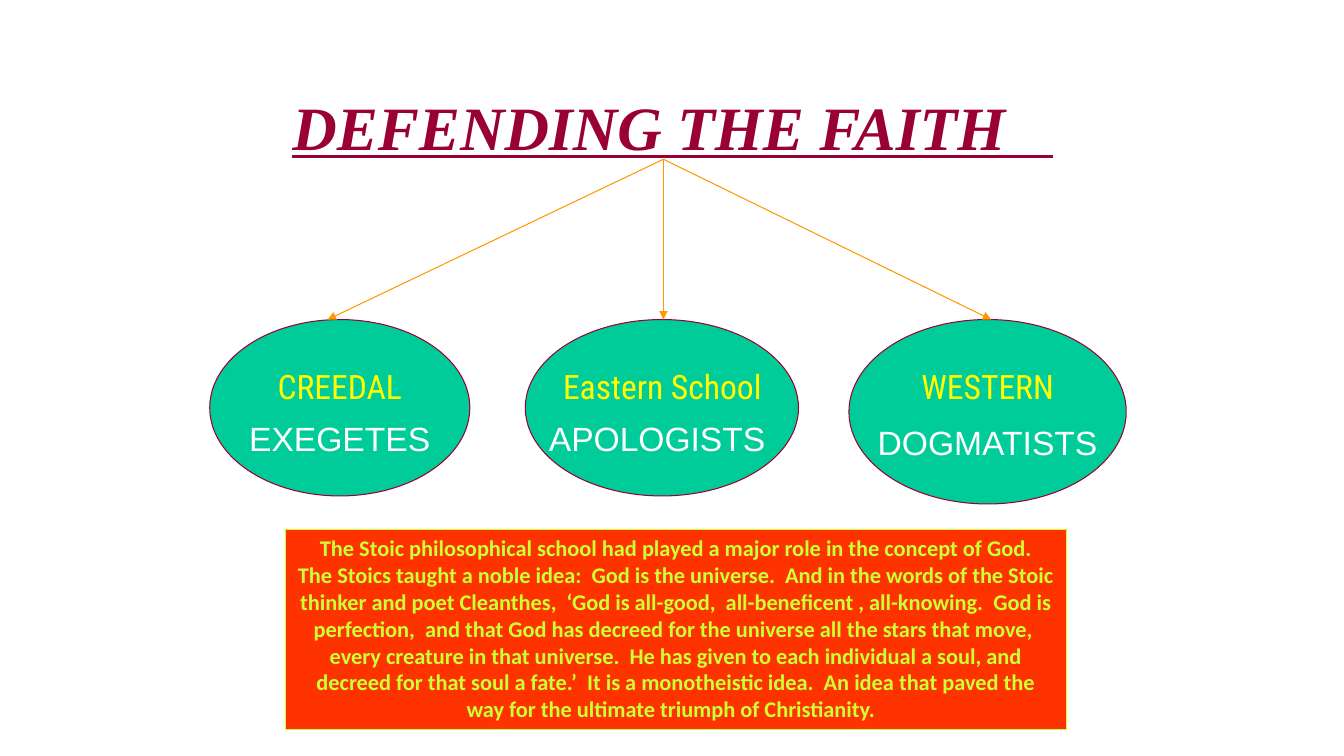
"""Build the "Defending the faith" slide: a title branching to three schools."""
from dataclasses import dataclass

from lxml import etree
from pptx import Presentation
from pptx.dml.color import RGBColor
from pptx.enum.shapes import MSO_CONNECTOR, MSO_SHAPE
from pptx.enum.text import MSO_ANCHOR, PP_ALIGN
from pptx.oxml.ns import qn
from pptx.util import Inches, Pt

OVAL = MSO_SHAPE.OVAL
RECTANGLE = MSO_SHAPE.RECTANGLE
STRAIGHT = MSO_CONNECTOR.STRAIGHT
CENTER = PP_ALIGN.CENTER
TOP = MSO_ANCHOR.TOP
MIDDLE = MSO_ANCHOR.MIDDLE

MAROON = "990033"
GREEN = "00CC99"
YELLOW = "FFFF00"
WHITE = "FFFFFF"
ORANGE = "FF9900"
RED = "FF3300"
LIME = "CCFF33"

BRANCH_X, BRANCH_Y = 6.58, 1.58
SCHOOL_TOP = 3.17
LABEL_TOP = 3.58

STOIC_TEXT = (
    " The Stoic philosophical school had played a major role in the concept of God.  "
    "The Stoics taught a noble idea:  God is the universe.  And in the words of the Stoic "
    "thinker and poet Cleanthes,  ‘God is all-good,  all-beneficent , all-knowing.  God is "
    "perfection,  and that God has decreed for the universe all the stars that move,  "
    "every creature in that universe.  He has given to each individual a soul, and "
    "decreed for that soul a fate.’  It is a monotheistic idea.  An idea that paved the "
    "way for the ultimate triumph of Christianity.  "
)


@dataclass(frozen=True)
class Style:
    """Type settings of a text."""
    font: str
    size: int
    color: str
    bold: bool = False
    italic: bool = False
    underline: bool = False


@dataclass(frozen=True)
class School:
    """One oval with its label and the end of its arrow."""
    label: str
    name: str
    left: float
    width: float
    height: float
    label_left: float
    label_width: float
    arrow_x: float


TITLE = Style("Times New Roman", 44, MAROON, bold=True, italic=True, underline=True)
LABEL = Style("Roboto Condensed", 24, YELLOW)
NAME = Style("Arial", 24, WHITE)
BODY = Style("Calibri", 16, LIME, bold=True)

SCHOOLS = [
    School("CREEDAL", "EXEGETES", 2.08, 2.58, 1.75, 2.33, 2.08, 3.25),
    School("Eastern School", "APOLOGISTS ", 5.21, 2.71, 1.75, 5.5, 2.14, 6.58),
    School("WESTERN", "DOGMATISTS", 8.42, 2.75, 1.83, 8.67, 2.25, 9.83),
]


def rgb(value: str) -> RGBColor:
    """Turn a hex string into a colour."""
    return RGBColor.from_string(value)


def write(shape, text: str, style: Style, anchor=MIDDLE, wrap: bool = True) -> None:
    """Put one centred paragraph into a shape."""
    frame = shape.text_frame
    frame.word_wrap = wrap
    frame.vertical_anchor = anchor
    paragraph = frame.paragraphs[0]
    paragraph.text = text
    paragraph.alignment = CENTER
    font = paragraph.font
    font.name = style.font
    font.size = Pt(style.size)
    font.bold = style.bold
    font.italic = style.italic
    font.underline = style.underline
    font.color.rgb = rgb(style.color)


def add_text(page, left: float, top: float, width: float, height: float):
    """Add an empty text box."""
    return page.shapes.add_textbox(Inches(left), Inches(top), Inches(width), Inches(height))


def add_panel(page, kind, left: float, top: float, width: float, height: float,
              fill: str, line: str):
    """Add a filled and outlined preset shape."""
    panel = page.shapes.add_shape(kind, Inches(left), Inches(top), Inches(width), Inches(height))
    panel.shadow.inherit = False
    panel.fill.solid()
    panel.fill.fore_color.rgb = rgb(fill)
    panel.line.color.rgb = rgb(line)
    panel.line.width = Pt(0.75)
    return panel


def add_arrow(page, end_x: float) -> None:
    """Draw an arrow from the title to the top of a school."""
    arrow = page.shapes.add_connector(STRAIGHT, Inches(BRANCH_X), Inches(BRANCH_Y),
                                      Inches(end_x), Inches(SCHOOL_TOP))
    arrow.line.color.rgb = rgb(ORANGE)
    arrow.line.width = Pt(0.75)
    etree.SubElement(arrow.line._get_or_add_ln(), qn("a:tailEnd"), type="triangle")
    etree.SubElement(arrow._element.spPr, qn("a:effectLst"))


def add_school(page, school: School) -> None:
    """Draw a school's oval, label and arrow."""
    oval = add_panel(page, OVAL, school.left, SCHOOL_TOP, school.width, school.height,
                     GREEN, MAROON)
    write(oval, school.name, NAME, wrap=False)
    oval.text_frame.margin_top = Inches(0.66)
    label = add_text(page, school.label_left, LABEL_TOP, school.label_width, 0.42)
    write(label, school.label, LABEL, anchor=TOP, wrap=False)
    label.text_frame.margin_left = label.text_frame.margin_right = Inches(0)
    add_arrow(page, school.arrow_x)


def main() -> None:
    """Build and save the deck."""
    deck = Presentation()
    deck.slide_width = Inches(13.33)
    deck.slide_height = Inches(7.5)
    page = deck.slides.add_slide(deck.slide_layouts[6])
    write(add_text(page, 1.67, 0.58, 10, 1.33), "DEFENDING THE FAITH   ", TITLE)
    for school in SCHOOLS:
        add_school(page, school)
    panel = add_panel(page, RECTANGLE, 2.83, 5.25, 7.75, 1.99, RED, LIME)
    write(panel, STOIC_TEXT, BODY, anchor=TOP)
    deck.save("out.pptx")


if __name__ == "__main__":
    main()
